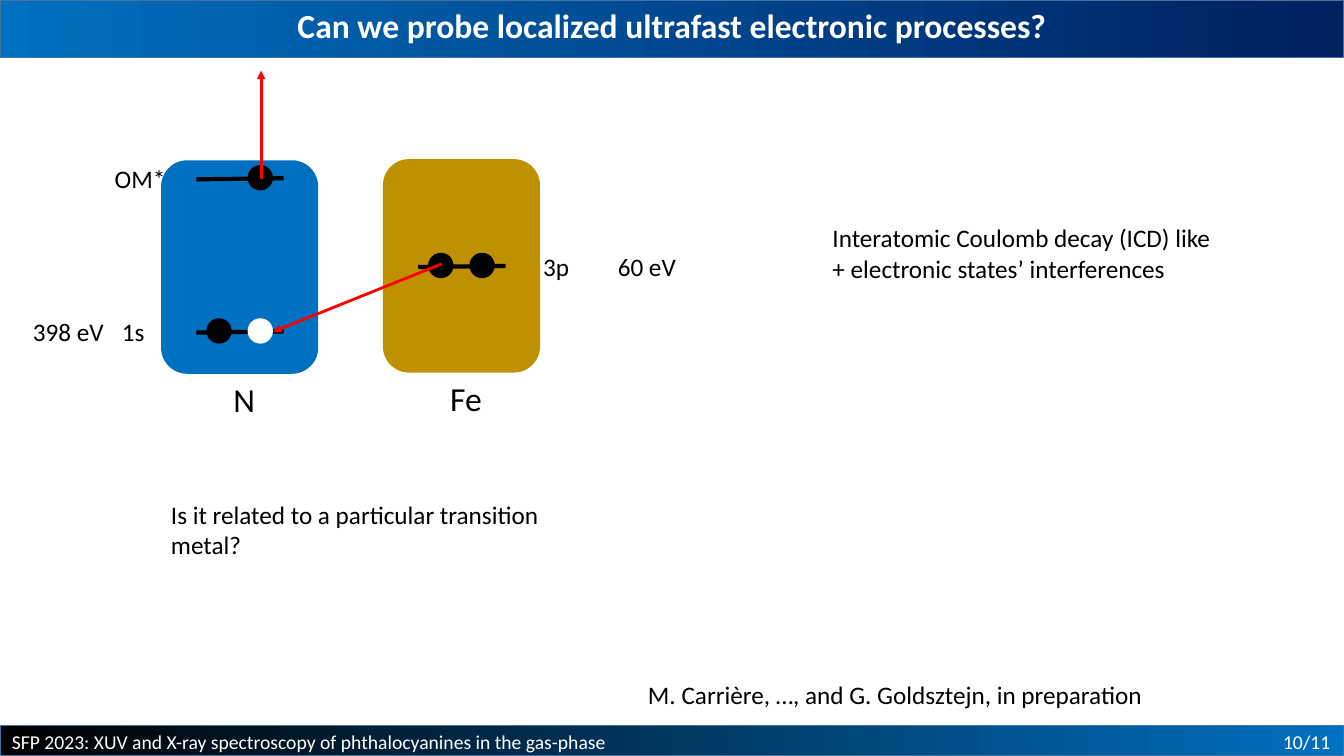
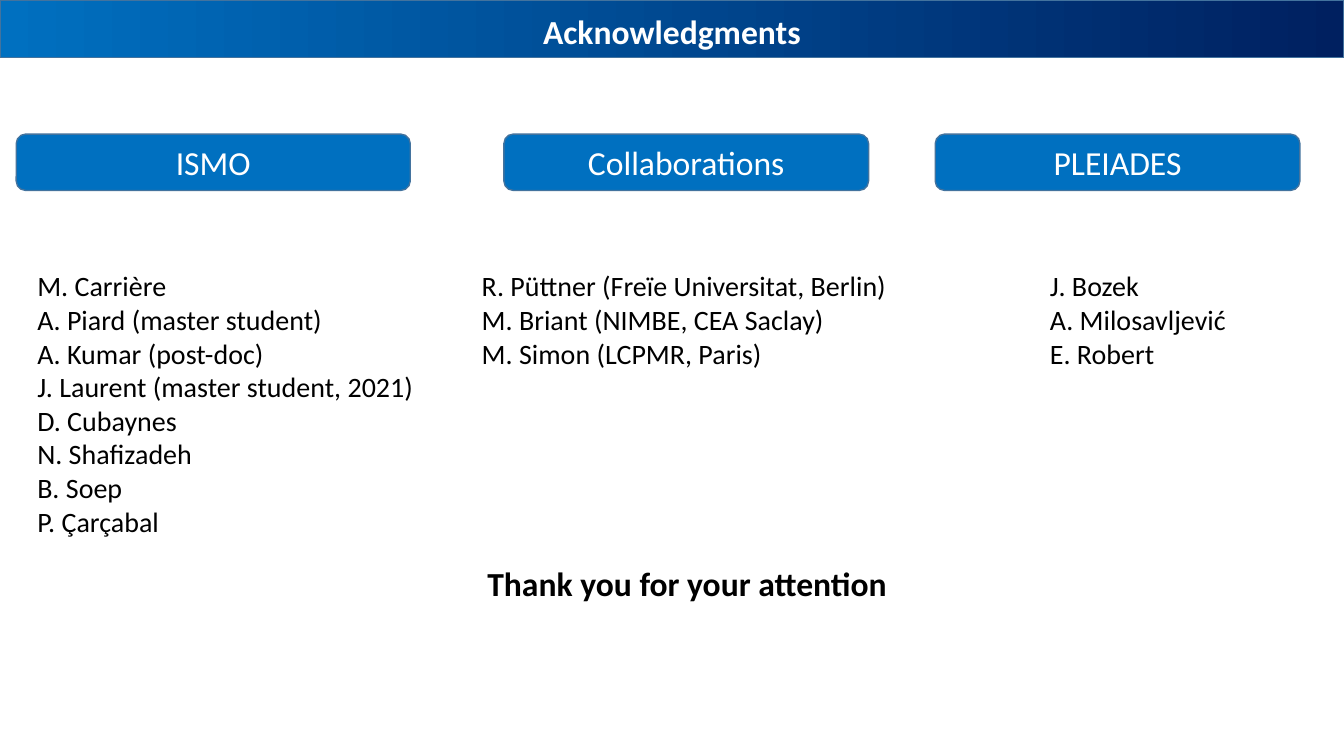
from lxml.etree import SubElement
from pptx import Presentation
from pptx.dml.color import RGBColor
from pptx.enum.shapes import MSO_CONNECTOR, MSO_SHAPE
from pptx.enum.text import MSO_ANCHOR, MSO_AUTO_SIZE, PP_ALIGN
from pptx.oxml.ns import qn
from pptx.util import Cm, Pt

# Shared style
FONT = "Calibri"
COLORS = {"blue": "0070C0", "navy": "002060", "outline": "43739E", "gold": "BF9000",
          "black": "000000", "white": "FFFFFF", "red": "FF0000"}
SLIDE_W, SLIDE_H = 33.87, 19.05
TITLE_H, FOOTER_H = 1.45, 0.76

# Slide 1 content (lengths in cm)
PROBE_TITLE = "Can we probe localized ultrafast electronic processes?"
FOOTER = "SFP 2023: XUV and X-ray spectroscopy of phthalocyanines in the gas-phase"
PAGE = "10/11"
ATOM_W, ATOM_H = 3.96, 5.38
LEVEL_DX, LEVEL_W, LEVEL_RISE = 0.89, 2.2, 0.03
ELECTRON_D = 0.64
ELECTRON_DX = (1.14, 2.18)
# name, left, top, colour, levels: (y, colours of the left and right electron)
ATOMS = [
    ("Fe", 9.65, 4.01, "gold", [(6.73, ("black", "black"))]),
    ("N", 4.06, 4.04, "blue", [(8.38, ("black", "white")), (4.52, (None, "black"))]),
]
ARROWS = [(6.58, 4.52, 6.58, 1.78), (11.13, 6.65, 6.88, 8.36)]
# left, top, width, lines
PROBE_TEXTS = [
    (15.32, 6.2, 3, ["60 eV"]),
    (13.44, 6.2, 3, ["3p"]),
    (0.58, 7.85, 3, ["398 eV"]),
    (2.82, 7.85, 2, ["1s"]),
    (2.64, 3.99, 3, ["OM*"]),
    (20.73, 5.49, 10.64, ["Interatomic Coulomb decay (ICD) like",
                          "+ electronic states’ interferences"]),
    (4.06, 12.45, 10.64, ["Is it related to a particular transition metal?"]),
    (16.08, 16.99, 17.3, ["M. Carrière, …, and G. Goldsztejn, in preparation"]),
]

# Slide 2 content: header, its left and width, list left and width, names
THANKS_TITLE = "Acknowledgments"
THANKS = "Thank you for your attention"
HEADER_Y, HEADER_H, NAMES_Y = 3.38, 1.42, 6.65
GROUPS = [
    ("ISMO", 0.41, 9.93, 0.69, 10.54,
     ["M. Carrière", "A. Piard (master student)", "A. Kumar (post-doc)",
      "J. Laurent (master student, 2021)", "D. Cubaynes", "N. Shafizadeh",
      "B. Soep", "P. Çarçabal"]),
    ("Collaborations", 12.7, 9.19, 11.89, 10.8,
     ["R. Püttner (Freïe Universitat, Berlin)", "M. Briant (NIMBE, CEA Saclay)",
      "M. Simon (LCPMR, Paris)"]),
    ("PLEIADES", 23.57, 9.19, 26.21, 5.56,
     ["J. Bozek", "A. Milosavljević", "E. Robert"]),
]


def rgb(name):
    return RGBColor.from_string(COLORS[name])


def write(tf, lines, size, color="black", bold=False, align=PP_ALIGN.LEFT,
          anchor=MSO_ANCHOR.TOP):
    tf.word_wrap = True
    tf.auto_size = MSO_AUTO_SIZE.NONE
    tf.vertical_anchor = anchor
    for i, line in enumerate(lines):
        p = tf.add_paragraph() if i else tf.paragraphs[0]
        p.alignment = align
        r = p.add_run()
        r.text = line
        r.font.name, r.font.size, r.font.bold = FONT, Pt(size), bold
        r.font.color.rgb = rgb(color)


def add_text(s, x, y, w, lines, size=18, **style):
    h = len(lines) * size * 0.043 + 0.25
    tb = s.shapes.add_textbox(Cm(x), Cm(y), Cm(w), Cm(h))
    write(tb.text_frame, lines, size, **style)


def add_box(s, kind, x, y, w, h, color=None):
    sp = s.shapes.add_shape(kind, Cm(x), Cm(y), Cm(w), Cm(h))
    sp.shadow.inherit = False
    sp.line.fill.background()
    if color:
        sp.fill.solid()
        sp.fill.fore_color.rgb = rgb(color)
    return sp


def outline(sp):
    sp.line.color.rgb = rgb("outline")
    sp.line.width = Pt(1)


def paint_band(sp, start, end):
    sp.fill.gradient()
    sp.fill.gradient_angle = 0
    for stop, position, color in zip(sp.fill.gradient_stops, (0, 1), (start, end)):
        stop.position = position
        stop.color.rgb = rgb(color)
    outline(sp)


def add_line(s, x1, y1, x2, y2, color, width, arrow=False):
    line = s.shapes.add_connector(MSO_CONNECTOR.STRAIGHT, Cm(x1), Cm(y1), Cm(x2), Cm(y2))
    line.line.color.rgb = rgb(color)
    line.line.width = Pt(width)
    if arrow:
        SubElement(line.line._get_or_add_ln(), qn("a:tailEnd"), type="triangle")
    SubElement(line._element.spPr, qn("a:effectLst"))


def add_slide(prs, title, text_top):
    s = prs.slides.add_slide(prs.slide_layouts[5])
    band = s.shapes.title
    band.left, band.top, band.width, band.height = Cm(0), Cm(0), Cm(SLIDE_W), Cm(TITLE_H)
    paint_band(band, "blue", "navy")
    write(band.text_frame, [title], 24, "white", True, PP_ALIGN.CENTER)
    band.text_frame.margin_top = Cm(text_top)
    return s


def add_footer(s):
    y = SLIDE_H - FOOTER_H
    band = add_box(s, MSO_SHAPE.RECTANGLE, 0, y, SLIDE_W, FOOTER_H)
    paint_band(band, "black", "blue")
    add_text(s, 0.05, y - 0.03, 24, [FOOTER], 14, color="white")
    add_text(s, 23.95, y - 0.03, 9.83, [PAGE], 14, color="white", align=PP_ALIGN.RIGHT)


def add_atom(s, name, x, y, color, levels):
    add_box(s, MSO_SHAPE.ROUNDED_RECTANGLE, x, y, ATOM_W, ATOM_H, color)
    add_text(s, x - 1.78, y + ATOM_H, 7.75, [name], 24, align=PP_ALIGN.CENTER)
    for level_y, electrons in levels:
        left = x + LEVEL_DX
        add_line(s, left, level_y, left + LEVEL_W, level_y - LEVEL_RISE, "black", 3)
        top = level_y - 0.04 - ELECTRON_D / 2
        for dx, electron in zip(ELECTRON_DX, electrons):
            if electron:
                add_box(s, MSO_SHAPE.OVAL, x + dx, top, ELECTRON_D, ELECTRON_D, electron)


def build_probe(prs):
    s = add_slide(prs, PROBE_TITLE, 0.13)
    add_footer(s)
    for atom in ATOMS:
        add_atom(s, *atom)
    for arrow in ARROWS:
        add_line(s, *arrow, "red", 2, arrow=True)
    for text in PROBE_TEXTS:
        add_text(s, *text)


def build_thanks(prs):
    s = add_slide(prs, THANKS_TITLE, 0.28)
    for header, x, w, names_x, names_w, names in GROUPS:
        sp = add_box(s, MSO_SHAPE.ROUNDED_RECTANGLE, x, HEADER_Y, w, HEADER_H, "blue")
        outline(sp)
        write(sp.text_frame, [header], 24, "white", align=PP_ALIGN.CENTER,
              anchor=MSO_ANCHOR.MIDDLE)
        add_text(s, names_x, NAMES_Y, names_w, names, 20)
    add_text(s, 3.84, 14.07, 26.95, [THANKS], 24, bold=True, align=PP_ALIGN.CENTER)


def main():
    prs = Presentation()
    prs.slide_width, prs.slide_height = Cm(SLIDE_W), Cm(SLIDE_H)
    build_probe(prs)
    build_thanks(prs)
    prs.save("out.pptx")


if __name__ == "__main__":
    main()
